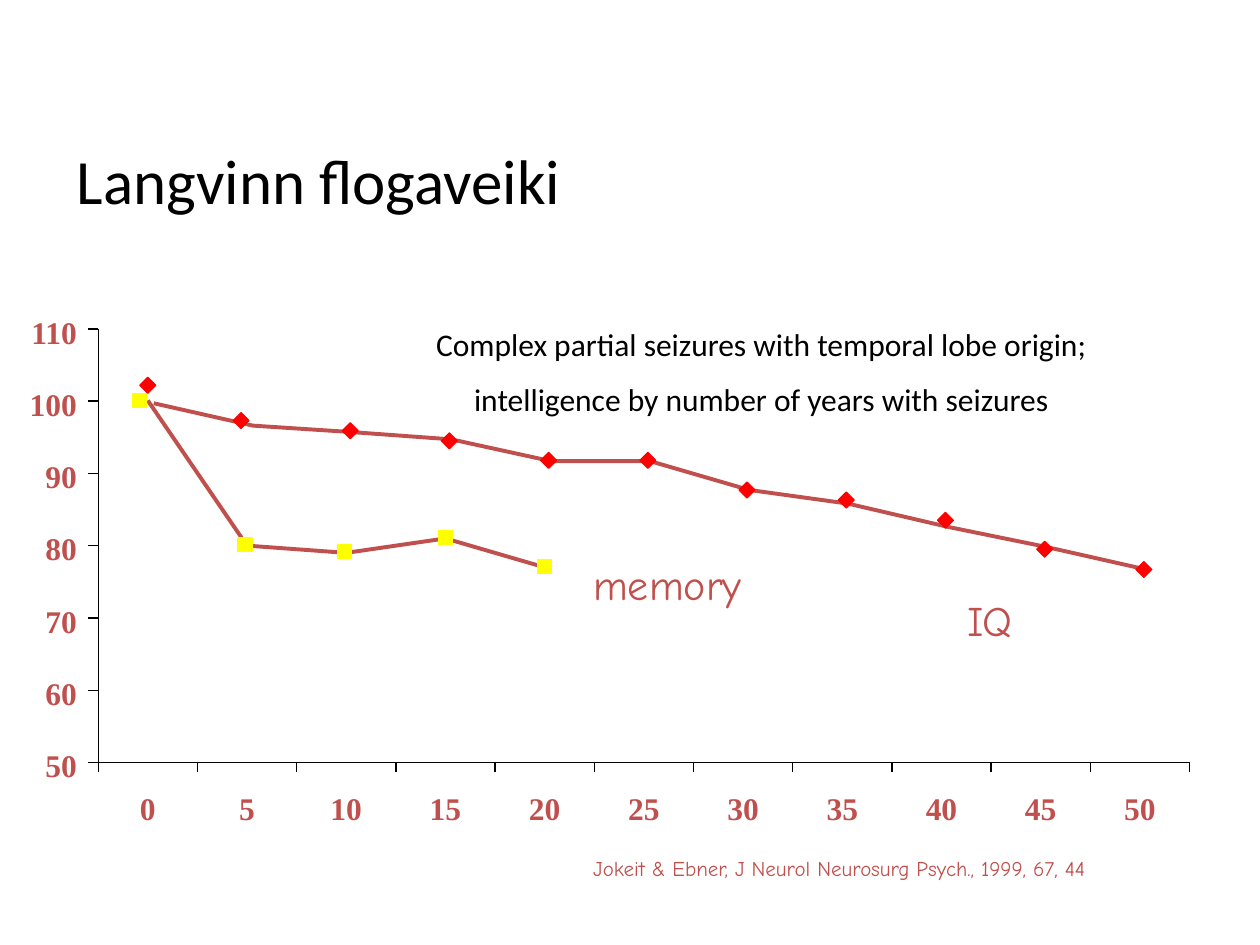
"""Build a slide charting IQ and memory against years with seizures."""
from lxml import etree
from pptx import Presentation
from pptx.dml.color import RGBColor
from pptx.enum.shapes import MSO_CONNECTOR, MSO_SHAPE
from pptx.enum.text import MSO_ANCHOR, PP_ALIGN
from pptx.oxml.ns import qn
from pptx.util import Cm, Pt

COLORS = {"text": "000000", "accent": "C0504D", "iq": "FF0000", "memory": "FFFF00"}
HEADING = ["Langvinn flogaveiki"]
CAPTION = [
    "Complex partial seizures with temporal lobe origin;",
    "intelligence by number of years with seizures",
]
NOTES = [
    ("Jokeit & Ebner, J Neurol Neurosurg Psych., 1999, 67, 44", 12, (11.71, 17.12, 12.6, 0.76)),
    ("IQ", 24, (19.25, 11.86, 2.54, 1.27)),
    ("memory", 24, (11.71, 11.13, 6.2, 1.27)),
]
SCORES = range(50, 111, 10)
YEARS = range(0, 51, 5)
SERIES = [
    {
        "name": "iq",
        "marker": MSO_SHAPE.DIAMOND,
        "size": 0.32,
        "line_shift": 0.3,
        "line": [99.7, 96.6, 95.7, 94.7, 91.7, 91.7, 87.7, 85.8, 82.6, 79.8, 76.7],
        "points": [
            (0, 102.2), (4.7, 97.3), (10.2, 95.9), (15.2, 94.5), (20.2, 91.8), (25.2, 91.8),
            (30.2, 87.7), (35.2, 86.3), (40.2, 83.5), (45.2, 79.5), (50.2, 76.7),
        ],
    },
    {
        "name": "memory",
        "marker": MSO_SHAPE.RECTANGLE,
        "size": 0.28,
        "line_shift": 0,
        "line": [100.1, 80, 79, 81, 77],
        "points": [(-0.4, 100.1), (4.9, 80.1), (9.9, 79.2), (15, 81.1), (20, 77.1)],
    },
]
LEFT, RIGHT, TOP, BOTTOM = 1.98, 23.98, 6.63, 15.37
TICK = 0.2
YEAR_STEP = (RIGHT - LEFT) / len(YEARS)


def x_at(year):
    return LEFT + YEAR_STEP * (year / 5 + 0.5)


def y_at(score):
    return BOTTOM - (BOTTOM - TOP) * (score - SCORES[0]) / (SCORES[-1] - SCORES[0])


def rgb(name):
    return RGBColor.from_string(COLORS[name])


def add_text(lines, box, size, font, color, align=PP_ALIGN.LEFT, bold=False,
             inset=True, wrap=True, gap=0):
    frame = slide.shapes.add_textbox(*map(Cm, box)).text_frame
    frame.word_wrap = wrap
    frame.vertical_anchor = MSO_ANCHOR.MIDDLE
    if not inset:
        frame.margin_left = frame.margin_right = frame.margin_top = frame.margin_bottom = 0
    frame.text = "\n".join(lines)
    for index, paragraph in enumerate(frame.paragraphs):
        paragraph.alignment = align
        paragraph.space_before = Pt(gap if index else 0)
        paragraph.font.size, paragraph.font.name = Pt(size), font
        paragraph.font.bold = bold
        paragraph.font.color.rgb = rgb(color)


def add_axis_line(*ends):
    stroke = slide.shapes.add_connector(MSO_CONNECTOR.STRAIGHT, *map(Cm, ends))
    stroke.line.color.rgb, stroke.line.width = rgb("text"), Pt(0.75)
    etree.SubElement(stroke._element.spPr, qn("a:effectLst"))


def add_axis_label(value, box, align):
    add_text([str(value)], box, 18, "Times New Roman", "accent", align, True, False)


def add_curve(series):
    vertices = [
        (Cm(x_at(year + series["line_shift"])), Cm(y_at(score)))
        for year, score in zip(YEARS, series["line"])
    ]
    builder = slide.shapes.build_freeform(*vertices[0])
    builder.add_line_segments(vertices[1:], close=False)
    curve = builder.convert_to_shape()
    curve.shadow.inherit = False
    curve.fill.background()
    curve.line.color.rgb, curve.line.width = rgb("accent"), Pt(2.25)


def add_markers(series):
    size = series["size"]
    for year, score in series["points"]:
        marker = slide.shapes.add_shape(
            series["marker"], Cm(x_at(year) - size / 2), Cm(y_at(score) - size / 2),
            Cm(size), Cm(size))
        marker.shadow.inherit = False
        marker.fill.solid()
        marker.fill.fore_color.rgb = marker.line.color.rgb = rgb(series["name"])
        marker.line.width = Pt(0.75)


deck = Presentation()
deck.slide_width, deck.slide_height = Cm(25.4), Cm(19.05)
slide = deck.slides.add_slide(deck.slide_layouts[6])

add_text(HEADING, (1.3, 2.72, 10.36, 1.8), 36, "Calibri", "text", wrap=False)
add_text(CAPTION, (6.55, 5.9, 17.6, 3.18), 18, "Calibri", "text", PP_ALIGN.CENTER, gap=10)
for note, size, box in NOTES:
    add_text([note], box, size, "Comic Neue", "accent")

add_axis_line(LEFT, TOP, LEFT, BOTTOM)
add_axis_line(LEFT, BOTTOM, RIGHT, BOTTOM)
for score in SCORES:
    add_axis_line(LEFT - TICK, y_at(score), LEFT, y_at(score))
    add_axis_label(score, (0.35, y_at(score) - 0.33, 1.2, 0.76), PP_ALIGN.RIGHT)
for index in range(len(YEARS) + 1):
    x = LEFT + index * YEAR_STEP
    add_axis_line(x, BOTTOM + TICK, x, BOTTOM)
for year in YEARS:
    add_axis_label(year, (x_at(year) - 0.6, 15.9, 1.2, 0.76), PP_ALIGN.CENTER)

for series in SERIES:
    add_curve(series)
for series in SERIES:
    add_markers(series)

deck.save("out.pptx")
